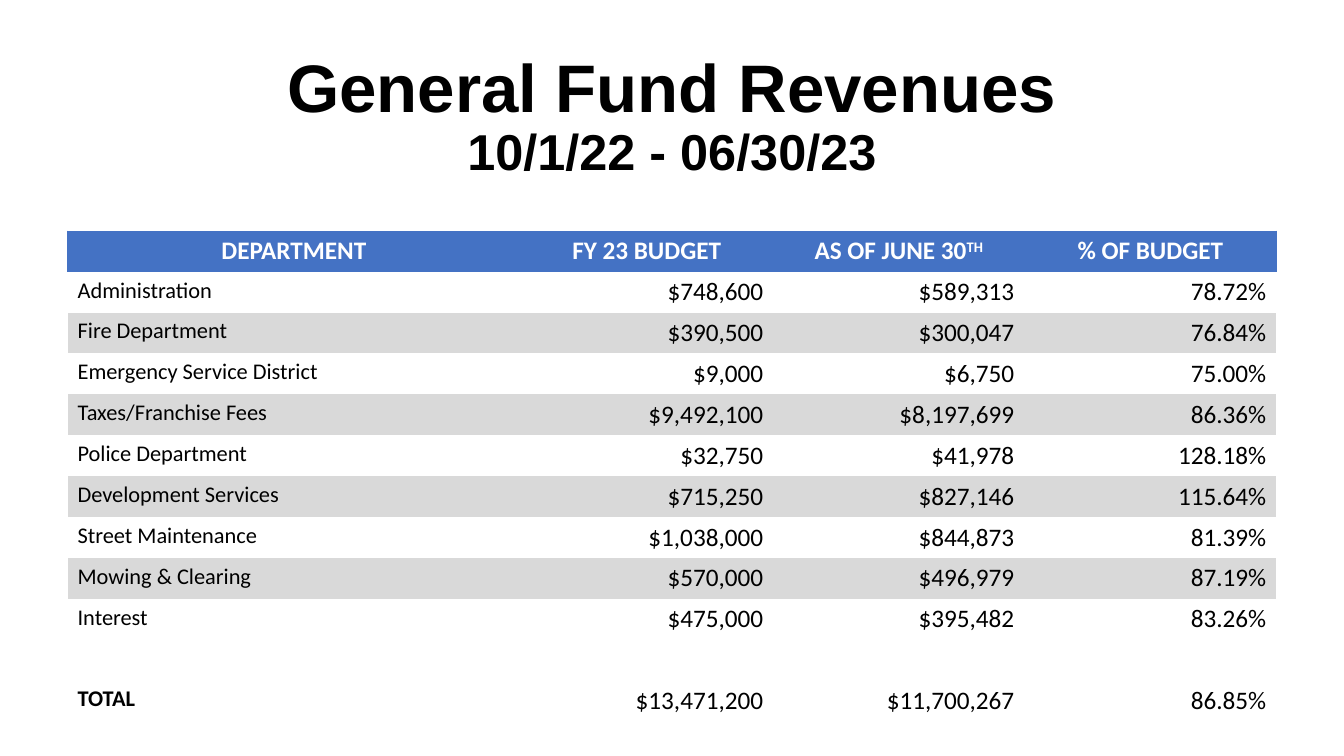
from dataclasses import dataclass

from lxml import etree
from pptx import Presentation
from pptx.dml.color import RGBColor
from pptx.enum.text import MSO_ANCHOR, MSO_AUTO_SIZE, PP_ALIGN
from pptx.oxml.ns import qn
from pptx.util import Inches, Pt

LEFT, MID, RIGHT = PP_ALIGN.LEFT, PP_ALIGN.CENTER, PP_ALIGN.RIGHT
CENTRE, FIXED = MSO_ANCHOR.MIDDLE, MSO_AUTO_SIZE.NONE
PLAIN = "{2D5ABB26-0587-4C30-8999-92F81FD0307C}"


@dataclass(frozen=True)
class Theme:
    """Colours, fonts and type sizes of the slide."""
    ink: str = "000000"
    white: str = "FFFFFF"
    blue: str = "4472C4"
    grey: str = "D9D9D9"
    head: str = "Arial"
    body: str = "Calibri"
    big: int = 48
    sub: int = 36
    base: int = 18
    label: int = 16


THEME = Theme()
WIDTHS = (4.49, 2.51, 2.49, 2.5)
HEADS = ("DEPARTMENT", "FY 23 BUDGET", "AS OF JUNE 30", "% OF BUDGET")
ROWS = (
    ("Administration", "$748,600", "$589,313", "78.72%"),
    ("Fire Department", "$390,500", "$300,047", "76.84%"),
    ("Emergency Service District", "$9,000", "$6,750", "75.00%"),
    ("Taxes/Franchise Fees", "$9,492,100", "$8,197,699", "86.36%"),
    ("Police Department", "$32,750", "$41,978", "128.18%"),
    ("Development Services", "$715,250", "$827,146", "115.64%"),
    ("Street Maintenance", "$1,038,000", "$844,873", "81.39%"),
    ("Mowing & Clearing", "$570,000", "$496,979", "87.19%"),
    ("Interest", "$475,000", "$395,482", "83.26%"),
    ("", "", "", ""),
    ("TOTAL", "$13,471,200", "$11,700,267", "86.85%"),
)


def style(run, face, size, color, bold=False):
    """Format one run."""
    font = run.font
    font.name, font.size, font.bold = face, Pt(size), bold
    font.color.rgb = RGBColor.from_string(color)


def edge(cell, side, color):
    """Draw a thin border on one side of a cell."""
    line = etree.SubElement(cell._tc.get_or_add_tcPr(), qn("a:ln" + side), w=str(Pt(0.5)))
    fill = etree.SubElement(line, qn("a:solidFill"))
    etree.SubElement(fill, qn("a:srgbClr"), val=color)


def paint(cell, color):
    """Fill a cell with one colour."""
    cell.fill.solid()
    cell.fill.fore_color.rgb = RGBColor.from_string(color)


def write(cell, text, align, size, color, bold):
    """Set and format the text of a cell."""
    cell.text = text
    par = cell.text_frame.paragraphs[0]
    par.alignment = align
    for run in par.runs:
        style(run, THEME.body, size, color, bold)
    return par


def add_title(slide, left, top, width, height):
    """Place the two-line title in its box."""
    title = slide.shapes.title
    title.left, title.top = Inches(left), Inches(top)
    title.width, title.height = Inches(width), Inches(height)
    frame = title.text_frame
    frame.text = "General Fund Revenues\v10/1/22 - 06/30/23"
    frame.auto_size, frame.vertical_anchor = FIXED, CENTRE
    par = frame.paragraphs[0]
    par.alignment, par.line_spacing = MID, 0.9
    for run, size in zip(par.runs, (THEME.big, THEME.sub)):
        style(run, THEME.head, size, THEME.ink, True)


def add_head(table):
    """Fill the blue header row."""
    last = len(HEADS) - 1
    for col, text in enumerate(HEADS):
        cell = table.cell(0, col)
        par = write(cell, text, MID, THEME.base, THEME.white, True)
        if col == 2:
            run = par.add_run()
            run.text = "TH"
            style(run, THEME.body, THEME.base, THEME.white, True)
            run.font._element.set("baseline", "30000")
        sides = ("L" if col == 0 else "") + ("R" if col == last else "") + "T"
        for side in sides:
            edge(cell, side, THEME.blue)
        paint(cell, THEME.blue)


def add_funds(slide, left, top, width, height):
    """Place the revenue table in its box."""
    count = len(ROWS) + 1
    frame = slide.shapes.add_table(
        count, len(HEADS), Inches(left), Inches(top), Inches(width), Inches(height))
    table = frame.table
    table.first_row = table.horz_banding = False
    table._tbl.tblPr.find(qn("a:tableStyleId")).text = PLAIN
    for col, size in zip(table.columns, WIDTHS):
        col.width = Inches(size)
    for row in table.rows:
        row.height = Inches(height / count)
    add_head(table)
    for num, row in enumerate(ROWS, 1):
        for col, text in enumerate(row):
            cell = table.cell(num, col)
            align, size = (RIGHT, THEME.base) if col else (LEFT, THEME.label)
            write(cell, text, align, size, THEME.ink, text == "TOTAL")
            if num % 2 == 0 and text:
                paint(cell, THEME.grey)
            else:
                cell.fill.background()


def main():
    """Build and save the slide."""
    deck = Presentation()
    deck.slide_width, deck.slide_height = Inches(13.33), Inches(7.5)
    slide = deck.slides.add_slide(deck.slide_layouts[5])
    add_title(slide, 0.67, 0.26, 11.99, 1.82)
    add_funds(slide, 0.67, 2.29, 11.99, 4.87)
    deck.save("out.pptx")


if __name__ == "__main__":
    main()
